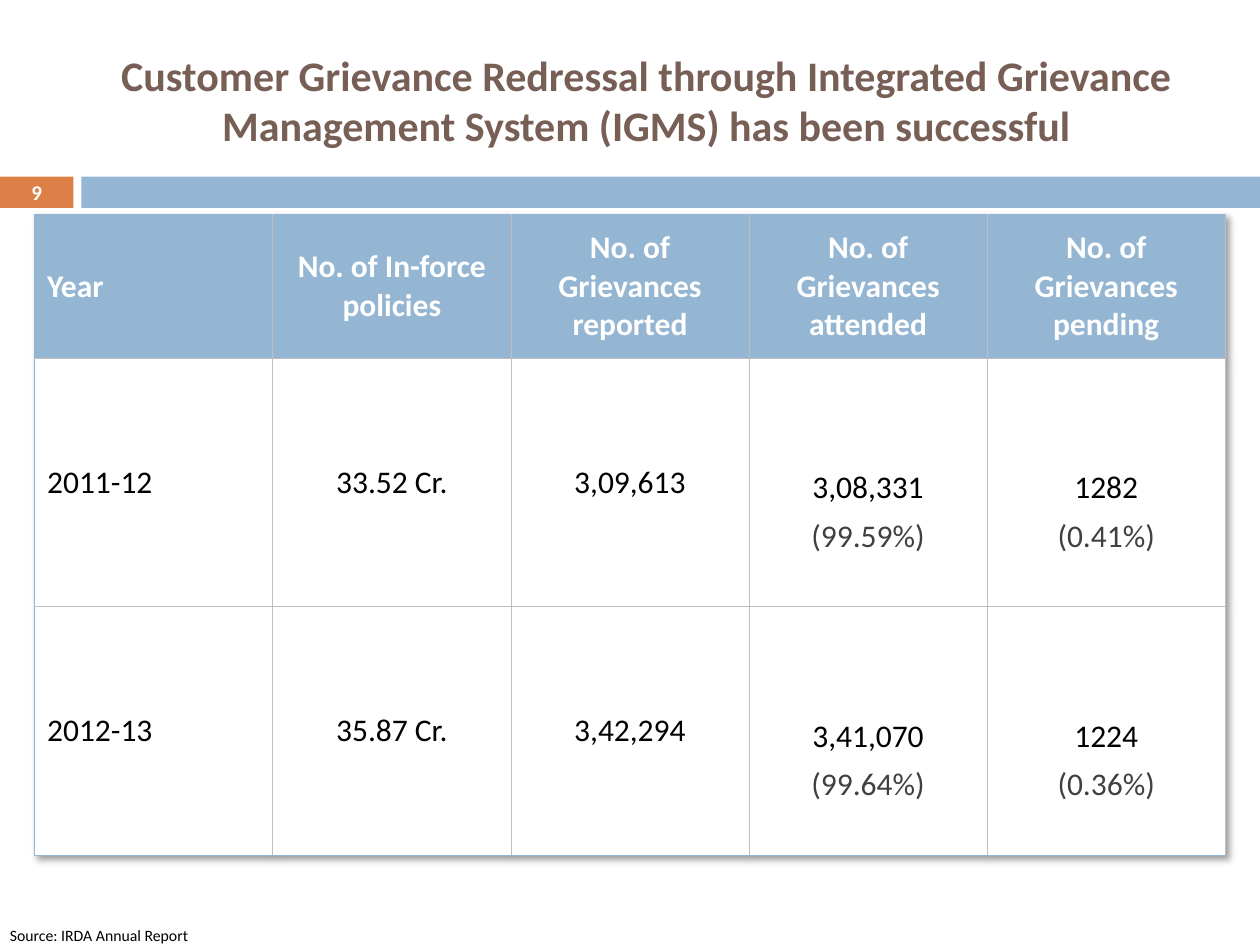
import lxml.etree
import pptx
import pptx.dml.color
import pptx.enum.shapes
import pptx.enum.text
import pptx.oxml
import pptx.oxml.ns
import pptx.util

Cm, Pt = pptx.util.Cm, pptx.util.Pt
ALIGN = pptx.enum.text.PP_ALIGN
ANCHOR = pptx.enum.text.MSO_ANCHOR

COLORS = {
    "orange": "DD8047",
    "blue": "94B6D2",
    "brown": "775F55",
    "grey": "BFBFBF",
    "dark": "404040",
    "black": "000000",
    "white": "FFFFFF",
}
FONT = "Calibri"
TITLE = ("Customer Grievance Redressal through Integrated Grievance "
         "Management System (IGMS) has been successful")
ROWS = [
    ["Year", "No. of In-force policies", "No. of Grievances reported",
     "No. of Grievances attended", "No. of Grievances pending"],
    ["2011-12", "33.52 Cr.", "3,09,613", "3,08,331\n(99.59%)", "1282\n(0.41%)"],
    ["2012-13", "35.87 Cr.", "3,42,294", "3,41,070\n(99.64%)", "1224\n(0.36%)"],
]


def rgb(name):
    return pptx.dml.color.RGBColor.from_string(COLORS[name])


def write(para, text, size=18, color="black", bold=False, align=ALIGN.CENTER, before=0):
    para.alignment = align
    para.space_before = Pt(before)
    span = para.add_run()
    span.text = text
    span.font.name = FONT
    span.font.size = Pt(size)
    span.font.bold = bold
    span.font.color.rgb = rgb(color)


class SlideBuilder:
    """Holds the deck style and the current page."""

    def __init__(self, deck):
        self.page = deck.slides.add_slide(deck.slide_layouts[5])

    def title(self, text, left, top, width, height):
        box = self.page.shapes.title
        box.left, box.top, box.width, box.height = map(Cm, (left, top, width, height))
        box.text_frame.word_wrap = True
        box.text_frame.vertical_anchor = ANCHOR.MIDDLE
        write(box.text_frame.paragraphs[0], text, size=24, color="brown", bold=True)

    def bar(self, color, left, top, width, height):
        shape = self.page.shapes.add_shape(
            pptx.enum.shapes.MSO_SHAPE.RECTANGLE, *map(Cm, (left, top, width, height)))
        shape.shadow.inherit = False
        shape.fill.solid()
        shape.fill.fore_color.rgb = rgb(color)
        shape.line.fill.background()

    def text(self, text, left, top, width, height, anchor=ANCHOR.MIDDLE, **style):
        box = self.page.shapes.add_textbox(*map(Cm, (left, top, width, height)))
        frame = box.text_frame
        frame.word_wrap = True
        frame.vertical_anchor = anchor
        frame.margin_left = frame.margin_right = frame.margin_top = frame.margin_bottom = 0
        write(frame.paragraphs[0], text, **style)

    def table(self, rows, left, top, column_width, row_heights):
        frame = self.page.shapes.add_table(
            len(rows), len(rows[0]), Cm(left), Cm(top),
            Cm(column_width * len(rows[0])), Cm(sum(row_heights)))
        table = frame.table
        for column in table.columns:
            column.width = Cm(column_width)
        for row, height in zip(table.rows, row_heights):
            row.height = Cm(height)
        for r, values in enumerate(rows):
            for c, value in enumerate(values):
                cell = table.cell(r, c)
                self.cell(cell, value, header=r == 0, first=c == 0)
                self.borders(cell, {
                    "lnL": "blue" if c == 0 else "grey",
                    "lnR": "grey",
                    "lnT": "blue" if r == 0 else "grey",
                    "lnB": "blue" if r == len(rows) - 1 else "grey",
                })
        self.table_shadow(table)

    def cell(self, cell, value, header, first):
        lines = value.split("\n")
        cell.fill.solid()
        cell.fill.fore_color.rgb = rgb("blue" if header else "white")
        cell.vertical_anchor = ANCHOR.MIDDLE
        cell.margin_left = cell.margin_right = cell.margin_bottom = Cm(0.25)
        # Cells with a percentage sit below the middle of the row
        cell.margin_top = Cm(1.45 if len(lines) > 1 else 0.25)
        for i, line in enumerate(lines):
            para = cell.text_frame.add_paragraph() if i else cell.text_frame.paragraphs[0]
            write(para, line, bold=header, before=6 if i else 0,
                  color="white" if header else "dark" if i else "black",
                  align=ALIGN.LEFT if first else ALIGN.CENTER)

    def borders(self, cell, sides):
        properties = cell._tc.get_or_add_tcPr()
        for position, (tag, color) in enumerate(sides.items()):
            properties.insert(position, pptx.oxml.parse_xml(
                f'<a:{tag} {pptx.oxml.ns.nsdecls("a")} w="6350"><a:solidFill>'
                f'<a:srgbClr val="{COLORS[color]}"/></a:solidFill></a:{tag}>'))

    def table_shadow(self, table):
        table._tbl.tblPr.insert(0, pptx.oxml.parse_xml(
            f'<a:effectLst {pptx.oxml.ns.nsdecls("a")}>'
            '<a:outerShdw blurRad="50800" dist="38100" dir="2700000" algn="tl">'
            f'<a:srgbClr val="{COLORS["black"]}"><a:alpha val="40000"/></a:srgbClr>'
            '</a:outerShdw></a:effectLst>'))


def main():
    deck = pptx.Presentation()
    deck.slide_width, deck.slide_height = Cm(25.4), Cm(19.05)
    page = SlideBuilder(deck)

    # Title and the band with the page number
    page.title(TITLE, 1.7, 0.64, 22.66, 2.74)
    page.bar("orange", 0, 3.56, 1.48, 0.63)
    page.bar("blue", 1.64, 3.56, 23.76, 0.63)
    page.text("9", 0, 3.54, 1.48, 0.68, size=12, color="white", bold=True)

    # Grievance figures
    page.table(ROWS, 0.7, 4.32, 4.8, [2.9, 5.01, 5.01])

    # Source line
    page.text("Source: IRDA Annual Report", 0.2, 18.67, 16.66, 0.38,
              anchor=ANCHOR.BOTTOM, size=9, align=ALIGN.LEFT)

    deck.save("out.pptx")


if __name__ == "__main__":
    main()
